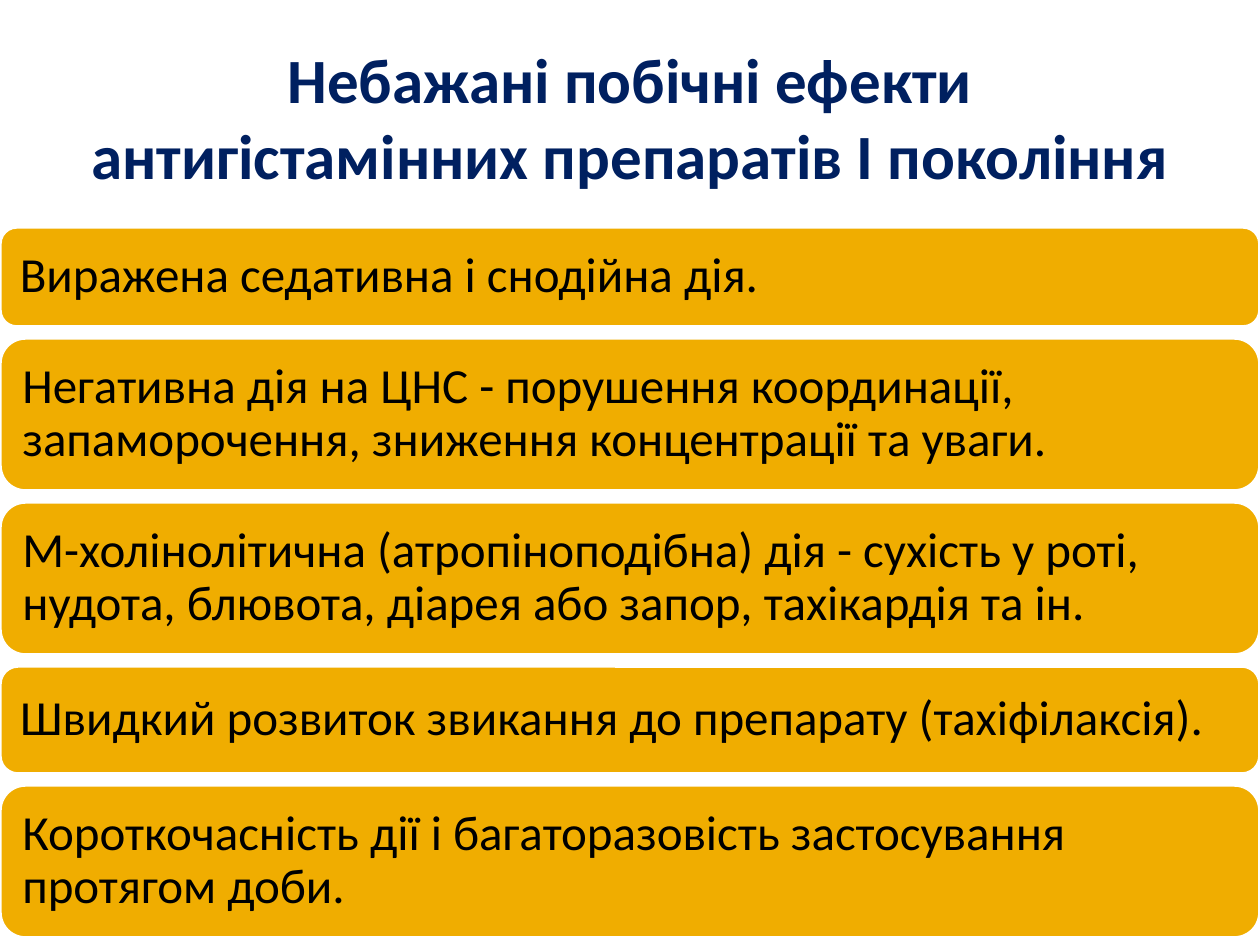
from pptx import Presentation
from pptx import util as u
from pptx.dml.color import RGBColor
from pptx.enum import shapes, text

SCALE = 914400 / 126
WIDTH, HEIGHT = 1260, 945
TOP, GAP, INSET = 227, 11, 15
TITLE = "Небажані побічні ефекти антигістамінних препаратів I покоління"
EFFECTS = [
    (100, "Виражена седативна і снодійна дія."),
    (153, "Негативна дія на ЦНС - порушення координації, "
          "запаморочення, зниження концентрації та уваги."),
    (153, "М-холінолітична (атропіноподібна) дія - сухість у роті, "
          "нудота, блювота, діарея або запор, тахікардія та ін."),
    (108, "Швидкий розвиток звикання до препарату (тахіфілаксія)."),
    (153, "Короткочасність дії і багаторазовість застосування "
          "протягом доби."),
]


def px(n):
    return u.Emu(round(n * SCALE))


def color(code):
    return RGBColor.from_string(code)


def apply(item, form):
    for key, value in form.items():
        setattr(item, key, value)


def write(shape, words, size, ink, bold, para, inset):
    frame = shape.text_frame
    apply(frame, {
        "text": words, "word_wrap": True,
        "auto_size": text.MSO_AUTO_SIZE.NONE,
        "vertical_anchor": text.MSO_ANCHOR.MIDDLE,
    })
    for side in ("left", "top", "right", "bottom"):
        setattr(frame, f"margin_{side}", px(inset))
    line = frame.paragraphs[0]
    apply(line, para)
    apply(line.font, {"name": "Calibri", "size": u.Pt(size), "bold": bold})
    line.font.color.rgb = color(ink)


def add_title(slide):
    title = slide.shapes.title
    apply(title, {"left": px(63), "top": px(38),
                  "width": px(1134), "height": px(157)})
    write(title, TITLE, 36, "002060", True,
          {"alignment": text.PP_ALIGN.CENTER}, 6)


def add_bar(slide, top, height, words):
    bar = slide.shapes.add_shape(
        shapes.MSO_SHAPE.ROUNDED_RECTANGLE,
        0, px(top), px(WIDTH), px(height))
    bar.shadow.inherit = False
    bar.fill.solid()
    bar.fill.fore_color.rgb = color("F0AD00")
    bar.line.color.rgb = color("FFFFFF")
    bar.line.width = u.Pt(2)
    write(bar, words, 28, "000000", False,
          {"alignment": text.PP_ALIGN.LEFT, "line_spacing": 0.9}, INSET)


def main():
    deck = Presentation()
    apply(deck, {"slide_width": px(WIDTH), "slide_height": px(HEIGHT)})
    slide = deck.slides.add_slide(deck.slide_layouts[5])
    add_title(slide)
    top = TOP
    for height, words in EFFECTS:
        add_bar(slide, top, height, words)
        top += height + GAP
    deck.save("out.pptx")


if __name__ == "__main__":
    main()
